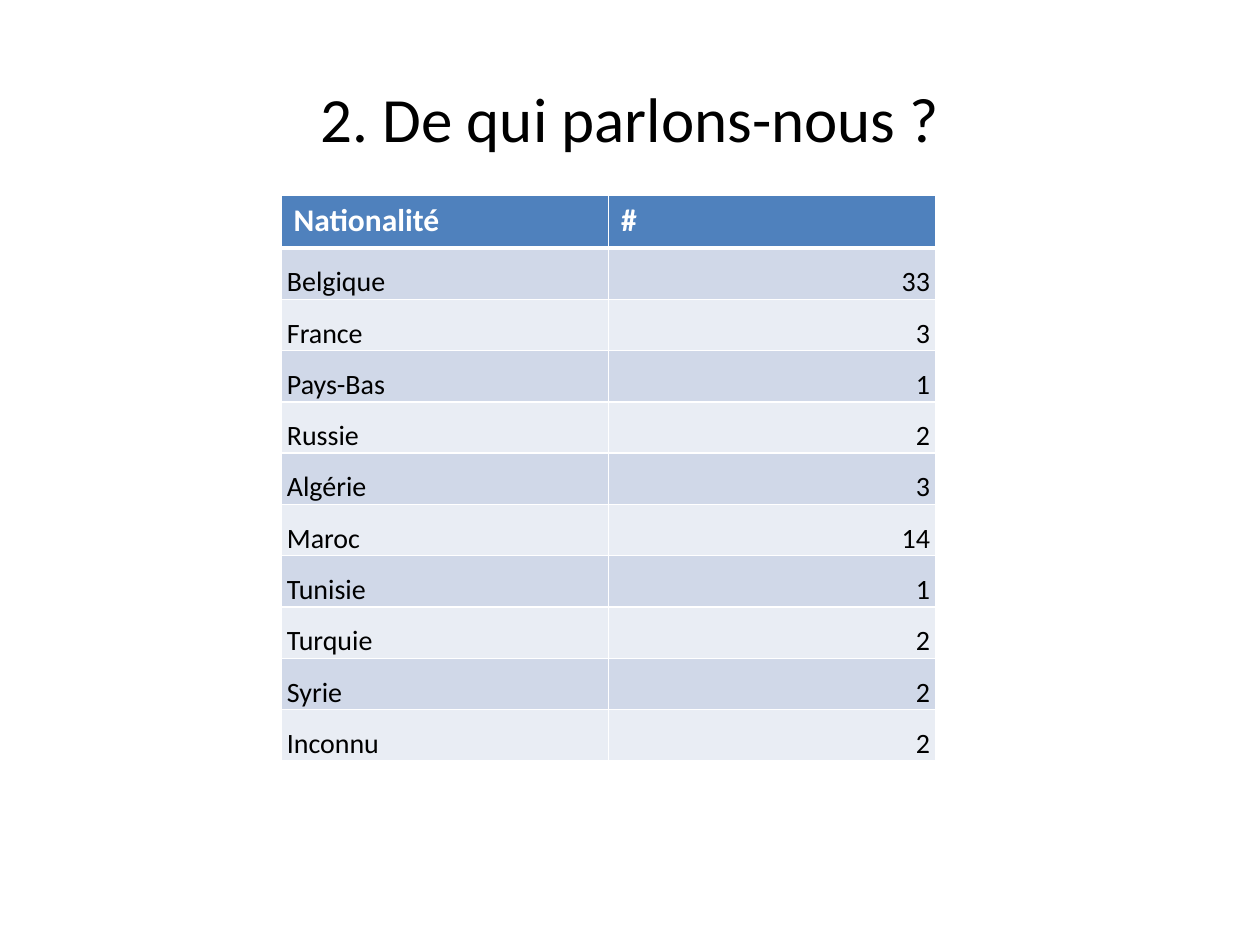
from lxml import etree
from pptx import Presentation
from pptx.dml.color import RGBColor
from pptx.enum.text import MSO_ANCHOR, PP_ALIGN
from pptx.oxml.ns import qn
from pptx.util import Pt

TOP, MIDDLE, BOTTOM = MSO_ANCHOR.TOP, MSO_ANCHOR.MIDDLE, MSO_ANCHOR.BOTTOM
LEFT, CENTER, RIGHT = PP_ALIGN.LEFT, PP_ALIGN.CENTER, PP_ALIGN.RIGHT
EMU_PER_PX = 914400 / 126
COLORS = {"text": "000000", "white": "FFFFFF", "header": "4F81BD",
          "odd": "D0D8E8", "even": "E9EDF4"}
ROWS = [("Nationalité", "#"), ("Belgique", "33"), ("France", "3"),
        ("Pays-Bas", "1"), ("Russie", "2"), ("Algérie", "3"), ("Maroc", "14"),
        ("Tunisie", "1"), ("Turquie", "2"), ("Syrie", "2"), ("Inconnu", "2")]


def px(n):
    return round(n * EMU_PER_PX)


def rgb(name):
    return RGBColor.from_string(COLORS[name])


def apply(obj, values):
    for name, value in values.items():
        setattr(obj, name, value)


class SlideBuilder:
    font = "Calibri"
    header_cell = {"vertical_anchor": TOP}
    body_cell = {"vertical_anchor": BOTTOM, "margin_left": px(6),
                 "margin_right": px(6), "margin_top": 0, "margin_bottom": 0}

    def __init__(self, prs):
        self.slide = prs.slides.add_slide(prs.slide_layouts[5])

    def text(self, tf, text, size, color, bold=False, **para):
        p = tf.paragraphs[0]
        apply(p, para)
        r = p.add_run()
        r.text = text
        apply(r.font, {"name": self.font, "size": Pt(size), "bold": bold})
        r.font.color.rgb = rgb(color)

    def title(self, text, left, top, width, height):
        sp = self.slide.shapes.title
        apply(sp, {"left": px(left), "top": px(top),
                   "width": px(width), "height": px(height)})
        sp.text_frame.vertical_anchor = MIDDLE
        self.text(sp.text_frame, text, 36, "text", alignment=CENTER)

    def borders(self, cell, bottom):
        tcPr = cell._tc.get_or_add_tcPr()
        for i, (side, width) in enumerate((("L", 1), ("R", 1), ("T", 1), ("B", bottom))):
            ln = etree.Element(qn(f"a:ln{side}"), w=str(Pt(width)))
            fill = etree.SubElement(ln, qn("a:solidFill"))
            etree.SubElement(fill, qn("a:srgbClr"), val=COLORS["white"])
            tcPr.insert(i, ln)

    def table(self, rows, left, top, width, header_height, body_height):
        n_cols = len(rows[0])
        height = px(header_height + body_height)
        table = self.slide.shapes.add_table(
            len(rows), n_cols, px(left), px(top), px(width), height).table
        for col in table.columns:
            col.width = px(width) // n_cols
        for i, values in enumerate(rows):
            header = i == 0
            table.rows[i].height = (px(header_height) if header
                                    else px(body_height) // (len(rows) - 1))
            for j, text in enumerate(values):
                cell = table.cell(i, j)
                apply(cell, self.header_cell if header else self.body_cell)
                cell.fill.solid()
                cell.fill.fore_color.rgb = rgb(
                    "header" if header else "odd" if i % 2 else "even")
                self.borders(cell, 3 if header else 1)
                if header:
                    self.text(cell.text_frame, text, 18, "white", bold=True)
                else:
                    self.text(cell.text_frame, text, 16, "text",
                              alignment=RIGHT if j else LEFT, line_spacing=1.15)


def main():
    prs = Presentation()
    prs.slide_width, prs.slide_height = px(1260), px(945)
    s = SlideBuilder(prs)
    s.title("2. De qui parlons-nous ?", 63, 38, 1134, 158)
    s.table(ROWS, 281, 195, 655, 53, 513)
    prs.save("out.pptx")


if __name__ == "__main__":
    main()
